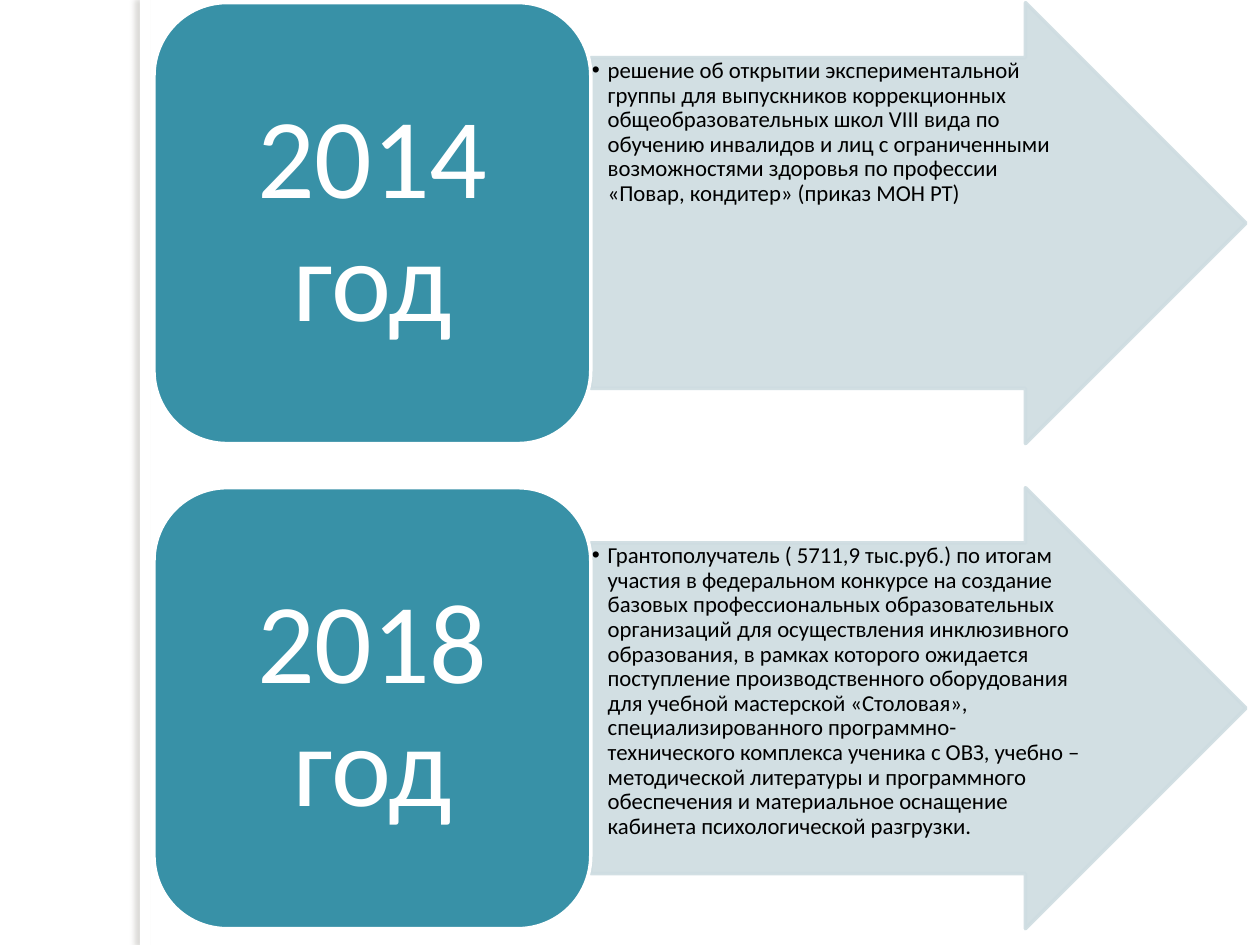
from lxml.etree import SubElement
from pptx import Presentation
from pptx.dml.color import RGBColor
from pptx.enum.shapes import MSO_SHAPE as Shape
from pptx.enum.text import MSO_ANCHOR as Anchor, MSO_AUTO_SIZE as AutoSize, PP_ALIGN as Align
from pptx.oxml import parse_xml
from pptx.oxml.ns import nsdecls, qn
from pptx.util import Pt

WHITE = RGBColor(0xFF, 0xFF, 0xFF)
BLACK = RGBColor(0, 0, 0)
TEAL = RGBColor(0x38, 0x91, 0xA7)
PALE = RGBColor(0xCE, 0xDC, 0xE1)
SHADOW = RGBColor(0x73, 0x6F, 0x63)
FONT = "Calibri"
COMPARISON_LAYOUT = 4

EVENTS = [
    ("2014 год",
     "решение об открытии экспериментальной группы для выпускников коррекционных "
     "общеобразовательных школ VIII вида по обучению инвалидов и лиц с ограниченными "
     "возможностями здоровья по профессии «Повар, кондитер» (приказ МОН РТ)"),
    ("2018 год",
     "Грантополучатель ( 5711,9 тыс.руб.) по итогам участия в федеральном конкурсе "
     "на создание базовых профессиональных образовательных организаций для "
     "осуществления инклюзивного образования, в рамках которого ожидается поступление "
     "производственного оборудования для учебной мастерской «Столовая», "
     "специализированного программно-технического комплекса ученика с ОВЗ, учебно – "
     "методической литературы и программного обеспечения и материальное оснащение "
     "кабинета психологической разгрузки."),
]


def add_panel(slide, kind, box, fill, line=None):
    shape = slide.shapes.add_shape(kind, *map(Pt, box))
    shape.shadow.inherit = False
    shape.fill.solid()
    shape.fill.fore_color.rgb = fill
    if line is None:
        shape.line.fill.background()
    else:
        shape.line.color.rgb = line
        shape.line.width = Pt(2)
    return shape


def place_text(slide, placeholder, box, text, size, color, insets, anchor):
    slide.shapes.element.append(placeholder.element)
    placeholder.left, placeholder.top, placeholder.width, placeholder.height = map(Pt, box)
    frame = placeholder.text_frame
    frame.word_wrap = True
    frame.auto_size = AutoSize.NONE
    frame.vertical_anchor = anchor
    horizontal, vertical = map(Pt, insets)
    frame.margin_left = frame.margin_right = horizontal
    frame.margin_top = frame.margin_bottom = vertical
    paragraph = frame.paragraphs[0]
    paragraph.line_spacing = 0.9
    paragraph.space_before = Pt(0)
    run = paragraph.add_run()
    run.text = text
    run.font.name = FONT
    run.font.size = Pt(size)
    run.font.bold = False
    run.font.color.rgb = color
    return paragraph


def add_side_band(slide, box):
    band = add_panel(slide, Shape.RECTANGLE, box, WHITE)
    effects = band.element.spPr.find(qn("a:effectLst"))
    effects.append(parse_xml(
        f'<a:outerShdw {nsdecls("a")} blurRad="{Pt(3)}" dist="{Pt(3)}" dir="10800000" '
        f'algn="tl" rotWithShape="0"><a:srgbClr val="{SHADOW}"><a:alpha val="25000"/>'
        '</a:srgbClr></a:outerShdw>'))


def add_arrow(slide, placeholder, box, text):
    left, top, width, height = box
    arrow = add_panel(slide, Shape.RIGHT_ARROW, box, PALE, PALE)
    arrow.adjustments[0], arrow.adjustments[1] = 0.75, 0.5
    for color in arrow.element.spPr.iter(qn("a:srgbClr")):
        SubElement(color, qn("a:alpha"), val="90000")
    text_box = (left, top + height / 8, width - height * 0.375, height * 0.75)
    paragraph = place_text(slide, placeholder, text_box, text, 13, BLACK, (0.65, 0.65), Anchor.TOP)
    properties = paragraph.alignment = Align.LEFT
    properties = paragraph._p.get_or_add_pPr()
    properties.set("marL", str(Pt(9)))
    properties.set("indent", str(-Pt(9)))
    SubElement(properties, qn("a:buChar"), char="•")


def add_year(slide, placeholder, box, text):
    left, top, width, height = box
    add_panel(slide, Shape.ROUNDED_RECTANGLE, box, TEAL, WHITE)
    inset = 12.2
    text_box = (left + inset, top + inset, width - 2 * inset, height - 2 * inset)
    paragraph = place_text(slide, placeholder, text_box, text, 65, WHITE, (19.5, 9.75), Anchor.MIDDLE)
    paragraph.alignment = Align.CENTER


def add_event(slide, year_holder, detail_holder, box, year, detail):
    left, top, width, height = box
    year_width = width * 0.4
    add_arrow(slide, detail_holder, (left + year_width, top, width - year_width, height), detail)
    add_year(slide, year_holder, (left, top, year_width, height), year)


def main():
    presentation = Presentation()
    presentation.slide_width, presentation.slide_height = Pt(720), Pt(540)
    slide = presentation.slides.add_slide(presentation.slide_layouts[COMPARISON_LAYOUT])
    title, *holders = slide.placeholders
    title.element.getparent().remove(title.element)
    add_side_band(slide, (80, 0, 5.75, 540))
    height = 252
    for index, (year, detail) in enumerate(EVENTS):
        year_holder, detail_holder = holders[2 * index:2 * index + 2]
        box = (88, 1.5 + index * height * 1.1, 624, height)
        add_event(slide, year_holder, detail_holder, box, year, detail)
    presentation.save("out.pptx")


if __name__ == "__main__":
    main()
